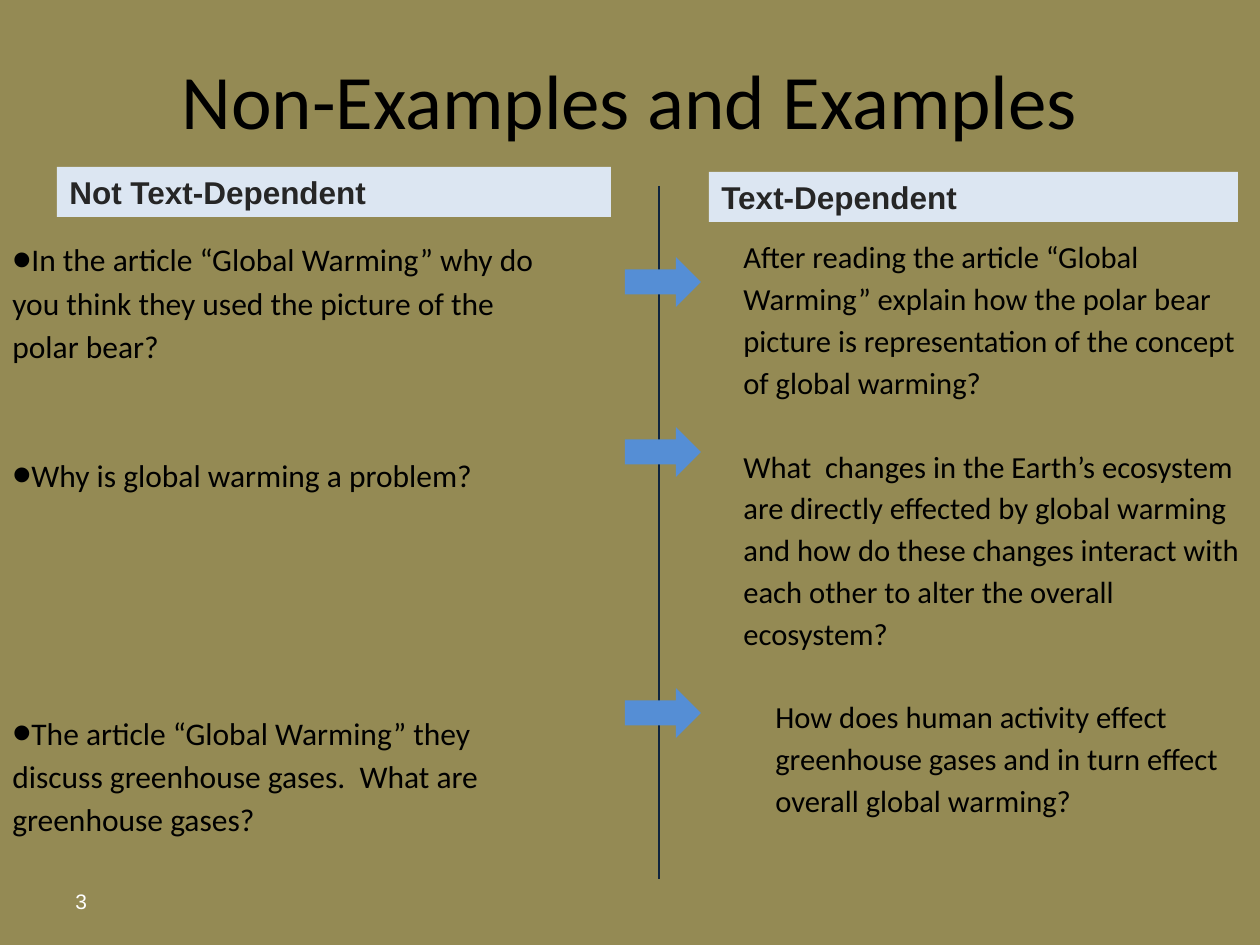
from dataclasses import dataclass

from lxml.etree import SubElement
from pptx import Presentation
from pptx.dml.color import RGBColor
from pptx.enum.shapes import MSO_CONNECTOR as Conn, MSO_SHAPE as Shape
from pptx.enum.text import MSO_ANCHOR as Anchor, PP_ALIGN as Align
from pptx.oxml.ns import qn
from pptx.util import Pt

SCALE = 914400 / 126  # EMU per px


@dataclass(frozen=True)
class Theme:
    back: str = "948A54"
    ink: str = "000000"
    header_ink: str = "262626"
    header_fill: str = "DCE6F2"
    number: str = "FFFFFF"
    divider: str = "0F243E"
    arrow: str = "558ED5"
    head_font: str = "Arial"
    body_font: str = "Calibri"
    title_size: float = 44
    left_size: float = 18
    right_size: float = 17.5
    number_size: float = 12
    line_spacing: float = 1.14


T = Theme()

# Each question: text, blank lines above it, left indent in px
NON_EXAMPLES = [
    ("In the article “Global Warming” why do you think they used the picture of the polar bear?", 0, 0),
    ("Why is global warming a problem?", 2, 0),
    ("The article “Global Warming” they discuss greenhouse gases.  What are greenhouse gases?", 5, 0),
]
EXAMPLES = [
    ("After reading the article “Global Warming” explain how the polar bear picture is "
     "representation of the concept of global warming?", 0, 0),
    ("What  changes in the Earth’s ecosystem are directly effected by global warming and how do "
     "these changes interact with each other to alter the overall ecosystem?", 1, 0),
    ("How does human activity effect greenhouse gases and in turn effect overall global warming?", 1, 32),
]
ARROW_TOPS = [257, 427, 688]


def px(n):
    return round(n * SCALE)


def box(*lengths):
    return [px(n) for n in lengths]


def rgb(value):
    return RGBColor.from_string(value)


def write(p, text, *, size, font=T.body_font, color=T.ink, bold=False, align=Align.LEFT):
    p.alignment = align
    r = p.add_run()
    r.text = text
    r.font.size = Pt(size)
    r.font.name = font
    r.font.bold = bold
    r.font.color.rgb = rgb(color)


def add_text(slide, frame, text=None, anchor=Anchor.MIDDLE, **fmt):
    tf = slide.shapes.add_textbox(*box(*frame)).text_frame
    tf.word_wrap = True
    tf.vertical_anchor = anchor
    if text:
        write(tf.paragraphs[0], text, **fmt)
    return tf


def add_bullet(p):
    pPr = p._p.get_or_add_pPr()
    color = SubElement(pPr, qn("a:buClr"))
    SubElement(color, qn("a:srgbClr"), val=T.ink)
    SubElement(pPr, qn("a:buSzPct"), val="173000")
    SubElement(pPr, qn("a:buFont"), typeface=T.head_font)
    SubElement(pPr, qn("a:buChar"), char="•")


def add_questions(slide, frame, questions, size, bullets=False):
    tf = add_text(slide, frame, anchor=Anchor.TOP)
    line_height = size * 1.2 * T.line_spacing
    for i, (text, gap_lines, indent) in enumerate(questions):
        p = tf.paragraphs[0] if i == 0 else tf.add_paragraph()
        p.line_spacing = T.line_spacing
        p.space_before = Pt(round(gap_lines * line_height, 1))
        pPr = p._p.get_or_add_pPr()
        pPr.set("marL", str(px(indent)))
        pPr.set("indent", "0")
        if bullets:
            add_bullet(p)
        write(p, text, size=size)


def add_shape(slide, kind, frame, fill):
    s = slide.shapes.add_shape(kind, *box(*frame))
    s.shadow.inherit = False
    s.fill.solid()
    s.fill.fore_color.rgb = rgb(fill)
    s.line.fill.background()
    return s


def add_header(slide, frame, text):
    tf = add_shape(slide, Shape.RECTANGLE, frame, T.header_fill).text_frame
    tf.word_wrap = True
    tf.vertical_anchor = Anchor.MIDDLE
    write(tf.paragraphs[0], text, size=T.left_size, font=T.head_font,
          color=T.header_ink, bold=True)


def add_divider(slide, x, top, bottom):
    line = slide.shapes.add_connector(Conn.STRAIGHT, *box(x, top, x, bottom))
    line.line.color.rgb = rgb(T.divider)
    line.line.width = Pt(1.5)
    SubElement(line._element.spPr, qn("a:effectLst"))


def main():
    prs = Presentation()
    prs.slide_width, prs.slide_height = box(1260, 945)
    slide = prs.slides.add_slide(prs.slide_layouts[6])
    slide.background.fill.solid()
    slide.background.fill.fore_color.rgb = rgb(T.back)

    # Title and slide number
    add_text(slide, (63, 63, 1134, 72), "Non-Examples and Examples",
             size=T.title_size, align=Align.CENTER)
    add_text(slide, (63, 876, 294, 50), "3", size=T.number_size,
             font=T.head_font, color=T.number)

    # Question columns
    add_questions(slide, (0, 229, 554, 709), NON_EXAMPLES, T.left_size, bullets=True)
    add_questions(slide, (731, 227, 529, 648), EXAMPLES, T.right_size)

    # Column headers
    add_header(slide, (57, 167, 554, 50), "Not Text-Dependent")
    add_header(slide, (709, 172, 529, 50), "Text-Dependent")

    # Divider and the arrows across it
    add_divider(slide, 659, 186, 879)
    for top in ARROW_TOPS:
        add_shape(slide, Shape.RIGHT_ARROW, (625, top, 76, 50), T.arrow)

    prs.save("out.pptx")


if __name__ == "__main__":
    main()
